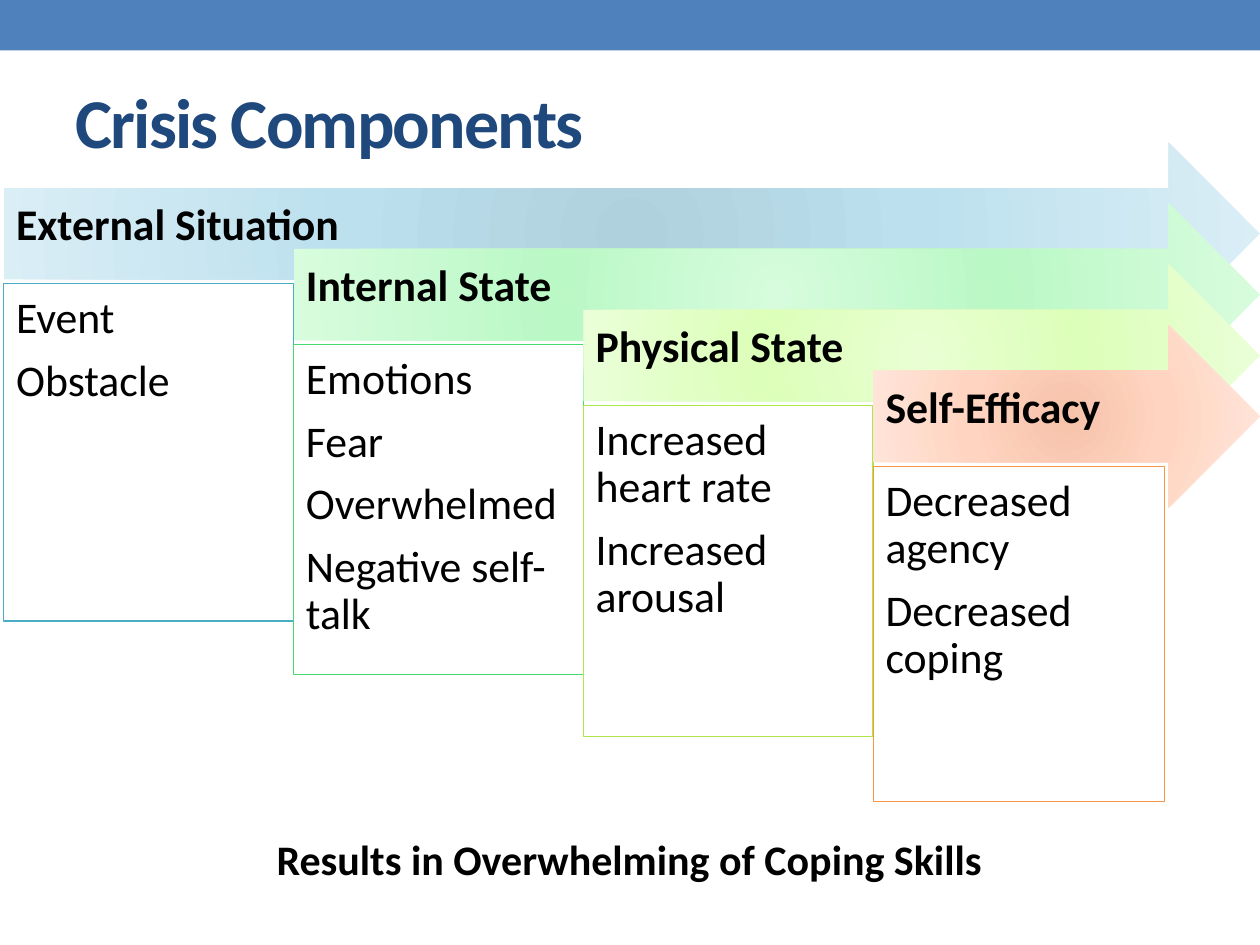
from pptx import Presentation
from pptx import util as u
from pptx.dml.color import RGBColor
from pptx.enum import shapes, text
from pptx.oxml import xmlchemy as xml

BLACK = RGBColor(0x00, 0x00, 0x00)
WHITE = RGBColor(0xFF, 0xFF, 0xFF)
BAND_BLUE = RGBColor(0x4F, 0x81, 0xBD)
TITLE_BLUE = RGBColor(0x1F, 0x49, 0x7D)
TEAL = RGBColor(0x4B, 0xAC, 0xC6)
GREEN = RGBColor(0x47, 0xD8, 0x72)
LIME = RGBColor(0xAC, 0xE9, 0x46)
ORANGE = RGBColor(0xF7, 0x96, 0x46)

GRADIENT_POSITIONS = (0, 45, 100)
ARROW_HEIGHT = 1.45
COLUMN_STEP = 2.3

# Heading, details, outline, gradient from centre to edge, box width and height
COMPONENTS = [
    ("External Situation", ["Event", "Obstacle"], TEAL,
     ("AFD0DD", "BCE0EE", "DAEEF6"), 2.3, 2.68),
    ("Internal State", ["Emotions", "Fear", "Overwhelmed", "Negative self-talk"], GREEN,
     ("D6FCDD", "BAF8C5", "D8FCDE"), 2.3, 2.62),
    ("Physical State", ["Increased heart rate", "Increased arousal"], LIME,
     ("E9FFD3", "DCFFB9", "EBFFD9"), 2.3, 2.63),
    ("Self-Efficacy", ["Decreased agency", "Decreased coping"], ORANGE,
     ("F6C2AA", "FFD4C0", "FFE7DD"), 2.31, 2.66),
]


def write_text(shape, lines, size=25, color=BLACK, bold=False, align=text.PP_ALIGN.LEFT,
               anchor=text.MSO_ANCHOR.TOP, insets=(0.1, 0.05, 0.1, 0.05),
               line_spacing=None, space_after=None, tracking=None):
    """Fill a shape with one paragraph per line; insets are left, top, right, bottom."""
    frame = shape.text_frame
    frame.word_wrap = True
    frame.vertical_anchor = anchor
    (frame.margin_left, frame.margin_top,
     frame.margin_right, frame.margin_bottom) = map(u.Inches, insets)
    for index, line in enumerate(lines):
        paragraph = frame.add_paragraph() if index else frame.paragraphs[0]
        paragraph.alignment = align
        paragraph.line_spacing = line_spacing
        paragraph.space_after = space_after
        run = paragraph.add_run()
        run.text = line
        run.font.name = "Calibri"
        run.font.size = u.Pt(size)
        run.font.bold = bold
        run.font.color.rgb = color
        if tracking is not None:
            run.font._element.set("spc", str(tracking * 100))


def add_box(slide, kind, box, fill=None, line=None):
    shape = slide.shapes.add_shape(kind, *map(u.Inches, box))
    shape.shadow.inherit = False
    if fill is not None:
        shape.fill.solid()
        shape.fill.fore_color.rgb = fill
    if line is None:
        shape.line.fill.background()
    else:
        shape.line.color.rgb = line
        shape.line.width = u.Pt(0.75)
    return shape


def add_label(slide, box, label, **style):
    write_text(slide.shapes.add_textbox(*map(u.Inches, box)), [label], **style)


def add_child(parent, tag, **attributes):
    child = xml.OxmlElement(tag)
    for name, value in attributes.items():
        child.set(name, str(value))
    parent.append(child)
    return child


def fill_radial(shape, colors):
    """Circular gradient from the middle of the shape outwards."""
    shape.fill.gradient()
    gradient = shape.fill._xPr.gradFill
    for child in list(gradient):
        gradient.remove(child)
    stops = add_child(gradient, "a:gsLst")
    for position, color in zip(GRADIENT_POSITIONS, colors):
        stop = add_child(stops, "a:gs", pos=position * 1000)
        add_child(stop, "a:srgbClr", val=color)
    circle = add_child(gradient, "a:path", path="circle")
    add_child(circle, "a:fillToRect", l=50000, t=50000, r=50000, b=50000)


def add_header(slide, box):
    left, top, width, height = box
    add_box(slide, shapes.MSO_SHAPE.RECTANGLE, (left, top, width, 0.4), fill=BAND_BLUE)
    add_label(slide, (left + 0.5, top + 0.42, width - 1, height - 0.42), "Crisis Components",
              size=40, color=TITLE_BLUE, bold=True, anchor=text.MSO_ANCHOR.MIDDLE, tracking=-1)


def add_components(slide, box):
    """Stepped arrows that share a right edge, each with a detail box below it."""
    left, top, width, _ = box
    spacing = {"line_spacing": 0.9, "space_after": u.Pt(8.75)}
    for index, (heading, details, outline, colors, box_width, box_height) in enumerate(COMPONENTS):
        offset = COLUMN_STEP * index
        arrow_top = top + ARROW_HEIGHT / 3 * index
        arrow = add_box(slide, shapes.MSO_SHAPE.RIGHT_ARROW,
                        (left + offset, arrow_top, width - offset, ARROW_HEIGHT))
        fill_radial(arrow, colors)
        write_text(arrow, [heading], bold=True, anchor=text.MSO_ANCHOR.MIDDLE,
                   insets=(0.1, 0.11, 0.1, 0.23), **spacing)
        detail_box = add_box(slide, shapes.MSO_SHAPE.RECTANGLE,
                             (left + offset, arrow_top + 1.12, box_width, box_height),
                             fill=WHITE, line=outline)
        write_text(detail_box, details, insets=(0.1, 0.1, 0.1, 0.1), **spacing)


def add_conclusion(slide, box):
    add_label(slide, box, "Results in Overwhelming of Coping Skills",
              size=24, bold=True, align=text.PP_ALIGN.CENTER)


def main():
    presentation = Presentation()
    presentation.slide_width = u.Inches(10)
    presentation.slide_height = u.Inches(7.5)
    slide = presentation.slides.add_slide(presentation.slide_layouts[6])
    add_header(slide, (0, 0, 10, 1.5))
    add_components(slide, (0.03, 1.13, 9.97, 5.24))
    add_conclusion(slide, (0.43, 6.57, 9.13, 0.5))
    presentation.save("out.pptx")


if __name__ == "__main__":
    main()
